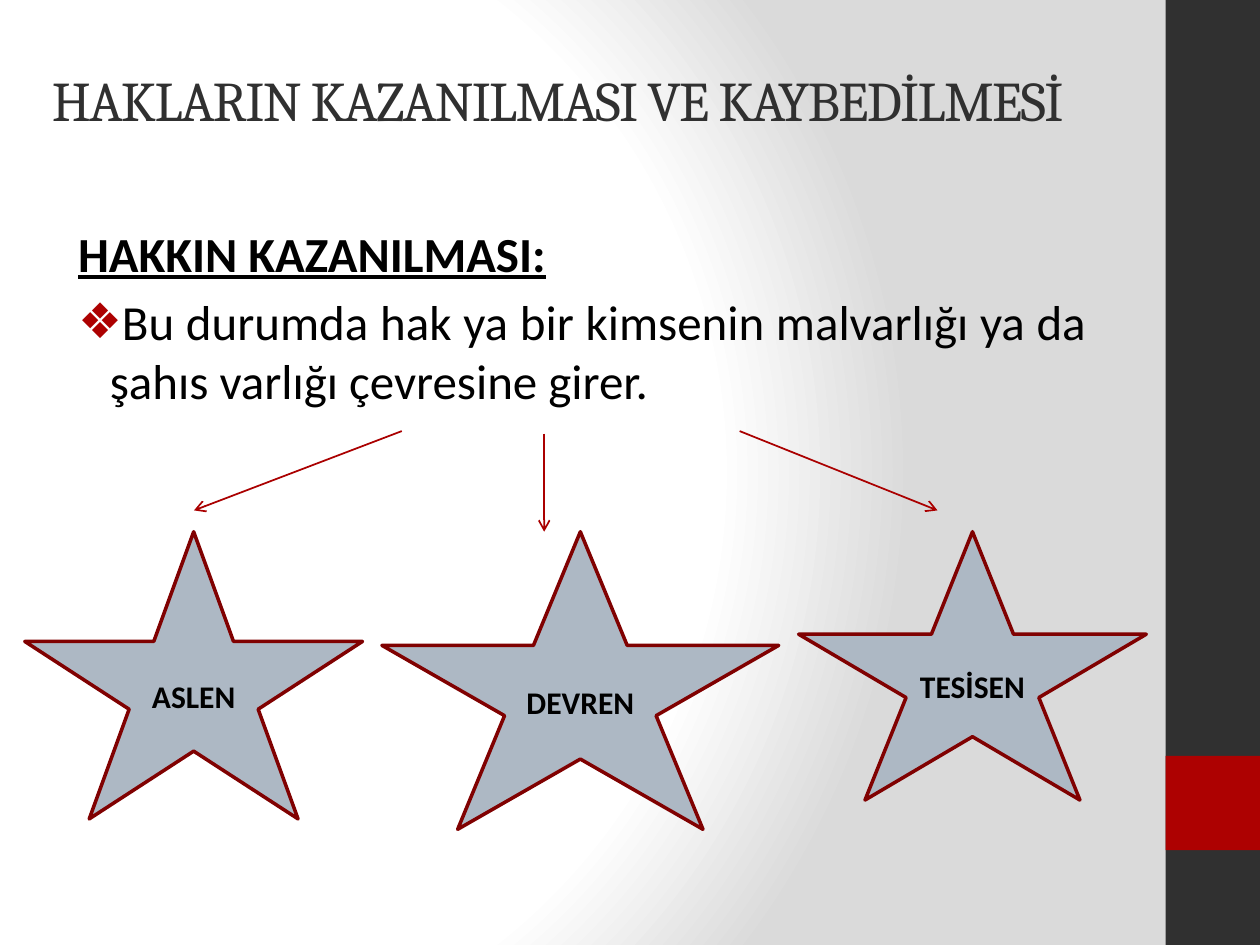
from lxml import etree
from pptx import Presentation
from pptx import oxml
from pptx import util as u
from pptx.dml.color import RGBColor
from pptx.enum import shapes, text
from pptx.oxml.ns import nsdecls, qn

CHARCOAL = RGBColor(0x30, 0x30, 0x30)
RED = RGBColor(0xAD, 0x01, 0x01)
ARROW_RED = RGBColor(0xAA, 0x00, 0x00)
DARK_RED = RGBColor(0x80, 0x01, 0x01)
STEEL = RGBColor(0xAD, 0xB8, 0xC4)
BLACK = RGBColor(0, 0, 0)
WHITE = RGBColor(0xFF, 0xFF, 0xFF)
SILVER = RGBColor(0xDA, 0xDA, 0xDA)


def place(shape, left, top, width, height):
    """Move and size a shape in centimetres."""
    shape.left, shape.top = u.Cm(left), u.Cm(top)
    shape.width, shape.height = u.Cm(width), u.Cm(height)


def style(font, name, size, color, bold=False):
    """Set the look of a font."""
    font.name, font.size, font.bold = name, u.Pt(size), bold
    font.color.rgb = color


def paint_background(slide):
    """Give the slide a radial gradient from white to silver."""
    stops = "".join(
        f'<a:gs pos="{share * 1000}"><a:srgbClr val="{color}"/></a:gs>'
        for share, color in ((0, WHITE), (75, WHITE), (100, SILVER)))
    background = oxml.parse_xml(
        f'<p:bg {nsdecls("p", "a")}><p:bgPr><a:gradFill rotWithShape="1">'
        f'<a:gsLst>{stops}</a:gsLst><a:path path="circle">'
        '<a:fillToRect l="20000" t="50000" r="100000" b="50000"/></a:path>'
        '</a:gradFill><a:effectLst/></p:bgPr></p:bg>')
    slide._element.cSld.insert(0, background)


def add_sidebar(slide, left, top, width, height):
    """Draw the dark side strip with its red square."""
    strips = ((0, height, CHARCOAL), (0.8 * height, width, RED))
    for offset, length, color in strips:
        strip = slide.shapes.add_shape(
            shapes.MSO_SHAPE.RECTANGLE, u.Cm(left), u.Cm(top + offset),
            u.Cm(width), u.Cm(length))
        strip.shadow.inherit = False
        strip.fill.solid()
        strip.fill.fore_color.rgb = color
        strip.line.fill.background()


def fill_title(slide, left, top, width, height):
    """Write the slide title."""
    title = slide.shapes.title
    place(title, left, top, width, height)
    title.text_frame.text = "HAKLARIN KAZANILMASI VE KAYBEDİLMESİ"
    title.text_frame.vertical_anchor = text.MSO_ANCHOR.MIDDLE
    heading = title.text_frame.paragraphs[0]
    heading.alignment = text.PP_ALIGN.LEFT
    run = heading.runs[0]
    style(run.font, "Cambria", 32, CHARCOAL)
    run._r.get_or_add_rPr().set("spc", "-100")


def set_bullet(paragraph, margin, indent, symbol=None):
    """Set the hanging indent in centimetres and the bullet, if any."""
    properties = paragraph._p.get_or_add_pPr()
    properties.set("marL", str(u.Cm(margin)))
    properties.set("indent", str(u.Cm(indent)))
    if symbol is None:
        etree.SubElement(properties, qn("a:buNone"))
        return
    bullet_color = etree.SubElement(properties, qn("a:buClr"))
    etree.SubElement(bullet_color, qn("a:srgbClr"), val=str(RED))
    etree.SubElement(properties, qn("a:buChar"), char=symbol)


def fill_body(slide, left, top, width, height):
    """Write the subheading and its bulleted explanation."""
    body = slide.placeholders[1]
    place(body, left, top, width, height)
    subheading = body.text_frame.paragraphs[0]
    subheading.text = "HAKKIN KAZANILMASI:"
    explanation = body.text_frame.add_paragraph()
    explanation.text = ("Bu durumda hak ya bir kimsenin malvarlığı ya da "
                        "şahıs varlığı çevresine girer.")
    set_bullet(subheading, 1.75, -1.42)
    set_bullet(explanation, 0.97, -0.64, "❖")
    subheading.space_before = u.Pt(0)
    explanation.space_before = u.Pt(5.6)
    for paragraph in (subheading, explanation):
        paragraph.alignment = text.PP_ALIGN.JUSTIFY
        is_heading = paragraph is subheading
        style(paragraph.runs[0].font, "Calibri", 28, BLACK, is_heading)
        paragraph.runs[0].font.underline = is_heading


def add_arrow(slide, start_x, start_y, end_x, end_y):
    """Draw a thin red arrow."""
    arrow = slide.shapes.add_connector(
        shapes.MSO_CONNECTOR.STRAIGHT, u.Cm(start_x), u.Cm(start_y),
        u.Cm(end_x), u.Cm(end_y))
    arrow.line.color.rgb = ARROW_RED
    arrow.line.width = u.Pt(1)
    etree.SubElement(arrow.line._get_or_add_ln(), qn("a:tailEnd"), type="arrow")
    etree.SubElement(arrow._element.spPr, qn("a:effectLst"))


def add_star(slide, label, left, top, width, height):
    """Draw a labelled five-pointed star."""
    star = slide.shapes.add_shape(
        shapes.MSO_SHAPE.STAR_5_POINT, u.Cm(left), u.Cm(top),
        u.Cm(width), u.Cm(height))
    star.shadow.inherit = False
    star.fill.solid()
    star.fill.fore_color.rgb = STEEL
    star.line.color.rgb = DARK_RED
    star.line.width = u.Pt(2)
    star.text_frame.text = label
    star.text_frame.vertical_anchor = text.MSO_ANCHOR.MIDDLE
    caption = star.text_frame.paragraphs[0]
    caption.alignment = text.PP_ALIGN.CENTER
    style(caption.runs[0].font, "Calibri", 18, BLACK, True)


def add_branches(slide, left, top, star_top):
    """Draw the three arrows and the stars below them."""
    arrows = ((7.6, 0, 3.41, 1.6), (10.47, 0.05, 10.47, 2.03),
              (14.41, 0, 18.4, 1.6))
    stars = (("ASLEN", 0, 6.81, 5.79), ("TESİSEN", 15.6, 7.01, 5.41),
             ("DEVREN", 7.2, 8, 6))
    for start_x, start_y, end_x, end_y in arrows:
        add_arrow(slide, left + start_x, top + start_y,
                  left + end_x, top + end_y)
    for label, offset, width, height in stars:
        add_star(slide, label, left + offset, star_top, width, height)


def main():
    """Build and save the slide."""
    deck = Presentation()
    deck.slide_width, deck.slide_height = u.Cm(25.4), u.Cm(19.05)
    slide = deck.slides.add_slide(deck.slide_layouts[1])
    paint_background(slide)
    add_sidebar(slide, 23.5, 0, 1.9, 19.05)
    fill_title(slide, 0.79, 0.79, 21.16, 2.41)
    fill_body(slide, 0.99, 4.37, 21.16, 13.34)
    add_branches(slide, 0.5, 8.69, 10.72)
    deck.save("out.pptx")


if __name__ == "__main__":
    main()
